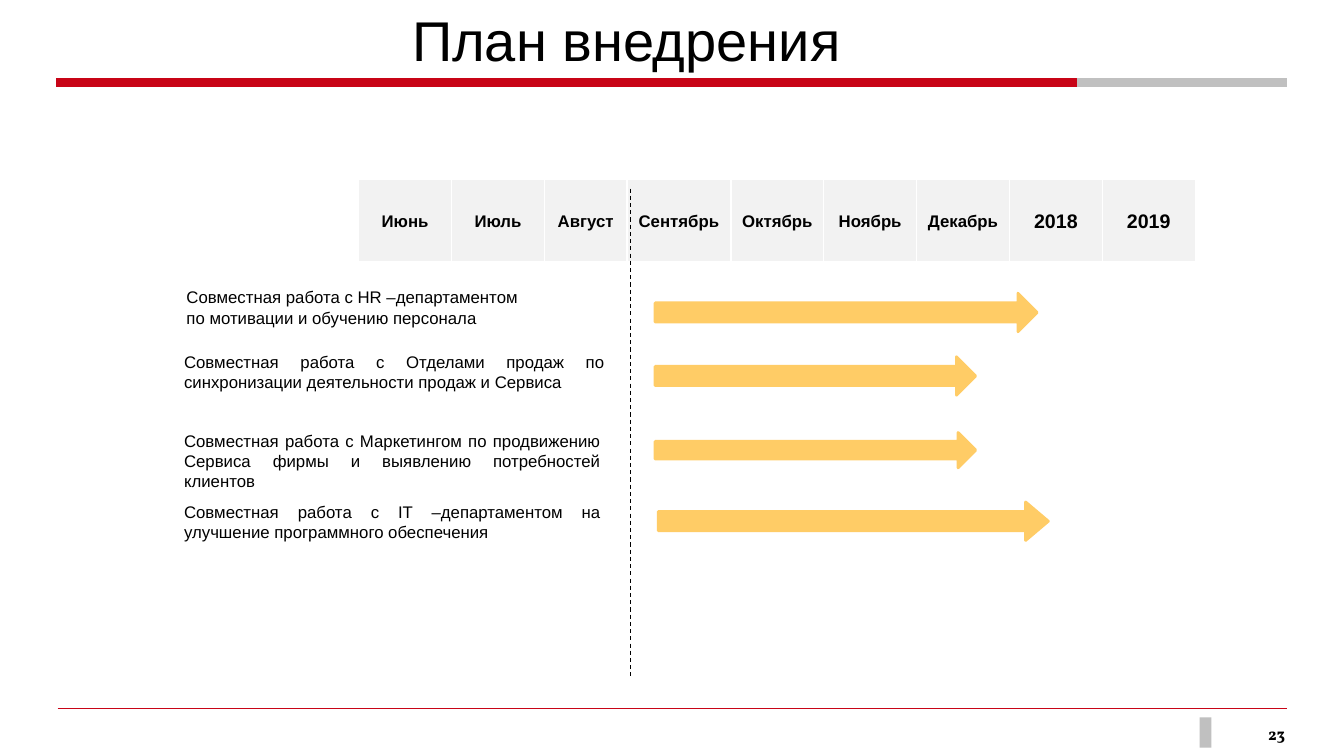
from pptx import Presentation
from pptx import util as u
from pptx.dml.color import RGBColor
from pptx.enum import dml, shapes, text
from pptx.oxml import parse_xml
from pptx.oxml.ns import nsdecls

RED = RGBColor(0xC8, 0x04, 0x17)
GREY = RGBColor(0xC0, 0xC0, 0xC0)
PALE = RGBColor(0xF2, 0xF2, 0xF2)
GOLD = RGBColor(0xFF, 0xCC, 0x66)
BLACK = RGBColor(0, 0, 0)

LEFT, CENTER, RIGHT, JUSTIFY = (
    text.PP_ALIGN.LEFT, text.PP_ALIGN.CENTER,
    text.PP_ALIGN.RIGHT, text.PP_ALIGN.JUSTIFY)
MIDDLE, TOP = text.MSO_ANCHOR.MIDDLE, text.MSO_ANCHOR.TOP

MONTHS = ["Июнь", "Июль", "Август", "Сентябрь", "Октябрь", "Ноябрь", "Декабрь"]
YEARS = ["2018", "2019"]
WIDTHS = {"Август": 2.08, "Сентябрь": 2.62}

TASKS = [
    ("Совместная работа с HR –департаментом\nпо мотивации и обучению персонала",
     (4.45, 7.11, 10.59, 1.27), (16.51, 7.39, 9.63, 0.97), 0.5),
    ("Совместная работа с Отделами продаж по синхронизации деятельности продаж и Сервиса",
     (4.39, 8.74, 11.1, 1.27), (16.51, 8.99, 8.08, 0.97), 0.5),
    ("Совместная работа с Маркетингом по продвижению Сервиса фирмы и выявлению потребностей клиентов",
     (4.39, 10.72, 11, 1.8), (16.51, 10.9, 8.08, 0.89), 0.5),
    ("Совместная работа с IT –департаментом на улучшение программного обеспечения",
     (4.39, 12.52, 11, 1.27), (16.59, 12.65, 9.83, 0.97), 0.59),
]


def cms(*sizes):
    return [u.Cm(size) for size in sizes]


def write(frame, words, size=12, bold=False, font="Arial", align=LEFT):
    for i, line in enumerate(words.split("\n")):
        para = frame.add_paragraph() if i else frame.paragraphs[0]
        para.alignment = align
        para.space_before = u.Pt(0)
        run = para.add_run()
        run.text = line
        run.font.name = font
        run.font.size = u.Pt(size)
        run.font.bold = bold
        run.font.color.rgb = BLACK


class Page:
    def __init__(self, deck):
        self.slide = deck.slides.add_slide(deck.slide_layouts[5])
        self.items = self.slide.shapes

    def title(self, words, box):
        head = self.items.title
        head.left, head.top, head.width, head.height = cms(*box)
        frame = head.text_frame
        frame.auto_size = text.MSO_AUTO_SIZE.NONE
        frame.vertical_anchor = MIDDLE
        write(frame, words, size=40)

    def label(self, words, box, inset=None, anchor=TOP, **style):
        frame = self.items.add_textbox(*cms(*box)).text_frame
        frame.word_wrap = True
        frame.vertical_anchor = anchor
        if inset is not None:
            frame.margin_left = frame.margin_right = u.Cm(inset)
            frame.margin_top = frame.margin_bottom = u.Cm(inset / 2)
        write(frame, words, **style)

    def line(self, ends, color, width, dash=False):
        link = self.items.add_connector(shapes.MSO_CONNECTOR.STRAIGHT, *cms(*ends))
        link.line.color.rgb = color
        link.line.width = u.Pt(width)
        if dash:
            link.line.dash_style = dml.MSO_LINE.DASH
        link._element.spPr.append(parse_xml(f"<a:effectLst {nsdecls('a')}/>"))

    def block(self, kind, box, color, edge=0):
        item = self.items.add_shape(kind, *cms(*box))
        item.shadow.inherit = False
        item.fill.solid()
        item.fill.fore_color.rgb = color
        if edge:
            item.line.color.rgb = color
            item.line.width = u.Pt(edge)
        else:
            item.line.fill.background()
        return item

    def arrow(self, box, tip):
        item = self.block(shapes.MSO_SHAPE.RIGHT_ARROW, box, GOLD, edge=2)
        item.adjustments[1] = tip

    def border(self, cell):
        props = cell._tc.get_or_add_tcPr()
        for side, width in zip("LRTB", (1, 1, 1, 3)):
            props.append(parse_xml(
                f'<a:ln{side} {nsdecls("a")} w="{u.Pt(width)}"><a:solidFill>'
                f'<a:srgbClr val="FFFFFF"/></a:solidFill></a:ln{side}>'))

    def header(self, left, top, height):
        names = MONTHS + YEARS
        widths = [WIDTHS.get(name, 2.34) for name in names]
        grid = self.items.add_table(
            1, len(names), *cms(left, top, sum(widths), height)).table
        grid.first_row = grid.horz_banding = False
        for i, name in enumerate(names):
            grid.columns[i].width = u.Cm(widths[i])
            cell = grid.cell(0, i)
            self.border(cell)
            cell.fill.solid()
            cell.fill.fore_color.rgb = PALE
            cell.vertical_anchor = MIDDLE
            size = 14 if name in YEARS else 12
            write(cell.text_frame, name, size=size, bold=True, align=CENTER)


def main():
    deck = Presentation()
    deck.slide_width, deck.slide_height = cms(33.87, 19.05)
    page = Page(deck)
    page.line((1.45, 17.86, 32.44, 17.86), RED, 1)
    page.label("23", (31.24, 18.19, 1.2, 0.58), inset=0.05, anchor=MIDDLE,
               bold=True, font="Vollkorn", align=RIGHT)
    page.block(shapes.MSO_SHAPE.RECTANGLE, (30.23, 18.08, 0.3, 0.76), GREY)
    page.line((1.42, 2.08, 27.13, 2.08), RED, 6)
    page.line((27.13, 2.08, 32.44, 2.08), GREY, 6)
    page.title("План внедрения", (10.13, 0, 11.48, 1.96))
    page.header(9.04, 4.52, 2.11)
    page.line((15.88, 4.75, 15.88, 17.04), BLACK, 0.75, dash=True)
    for words, box, bar, tip in TASKS:
        page.label(words, box, align=JUSTIFY)
        page.arrow(bar, tip)
    deck.save("out.pptx")


if __name__ == "__main__":
    main()
